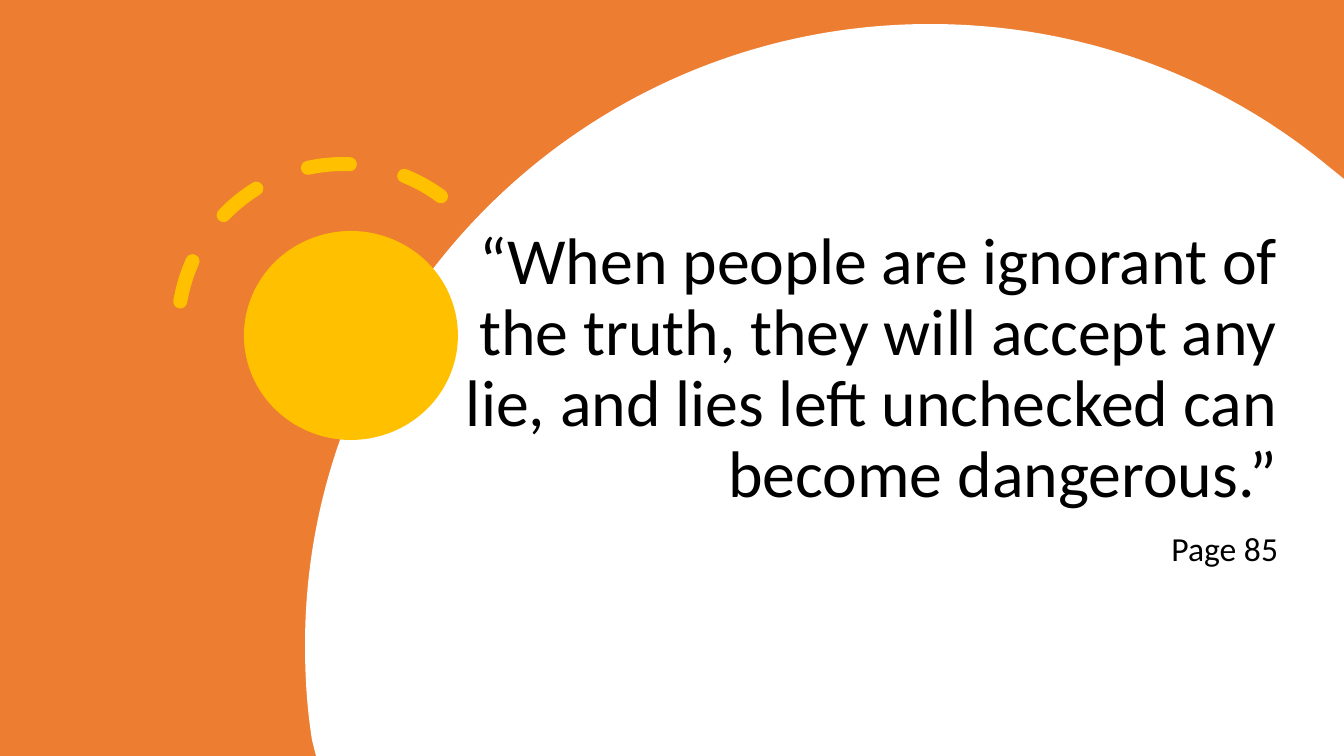
"""Build a quotation slide with a sun rising over a large white disc."""
from dataclasses import dataclass

import pptx
import pptx.dml.color
import pptx.enum.dml
import pptx.enum.shapes
import pptx.enum.text
import pptx.oxml.ns
import pptx.shapes.autoshape
import pptx.slide
import pptx.util

EMU_PER_PX = 12192000 / 1344
SLIDE_WIDTH, SLIDE_HEIGHT = 1344, 756
SHAPES = pptx.enum.shapes.MSO_SHAPE
ANCHORS = pptx.enum.text.MSO_ANCHOR
Point = tuple[int, int]


@dataclass(frozen=True)
class Theme:
    """Colours, font and type sizes of the slide."""
    orange: str = "ED7D31"
    white: str = "FFFFFF"
    gold: str = "FFC000"
    text: str = "000000"
    font: str = "Calibri"
    quote_size: int = 47
    source_size: int = 24
    ray_width: int = 10


@dataclass(frozen=True)
class Box:
    """A rectangle in px."""
    left: int
    top: int
    width: int
    height: int

    def emu(self) -> tuple[int, int, int, int]:
        """Return the four lengths in EMU."""
        return px(self.left), px(self.top), px(self.width), px(self.height)


@dataclass(frozen=True)
class Panel:
    """A filled preset shape."""
    kind: pptx.enum.shapes.MSO_SHAPE
    box: Box
    color: str


@dataclass(frozen=True)
class Outline:
    """A closed outline; a segment has one point if straight, three if curved."""
    start: Point
    segments: tuple[tuple[Point, ...], ...]
    color: str


@dataclass(frozen=True)
class Caption:
    """A right-aligned text block."""
    text: str
    box: Box
    size: int
    anchor: pptx.enum.text.MSO_ANCHOR
    space_before: int


THEME = Theme()
BACKDROP = Panel(SHAPES.RECTANGLE, Box(0, 0, SLIDE_WIDTH, SLIDE_HEIGHT), THEME.orange)
SUN = Panel(SHAPES.OVAL, Box(244, 231, 214, 209), THEME.gold)
HORIZON = Outline((930, 24), (
    ((1082, 24), (1220, 77), (1328, 166)),
    ((SLIDE_WIDTH, 179),),
    ((SLIDE_WIDTH, SLIDE_HEIGHT),),
    ((316, SLIDE_HEIGHT),),
    ((312, 740),),
    ((307, 709), (305, 677), (305, 645)),
    ((305, 302), (586, 24), (930, 24)),
), THEME.white)
RAYS = Box(178, 164, 330, 330)
CAPTIONS = (
    Caption("“When people are ignorant of the truth, they will accept any lie, "
            "and lies left unchecked can become dangerous.”",
            Box(445, 214, 843, 303), THEME.quote_size, ANCHORS.BOTTOM, 0),
    Caption("Page 85", Box(445, 527, 843, 146), THEME.source_size, ANCHORS.TOP, 10),
)


def px(length: int) -> int:
    """Turn px into EMU."""
    return round(length * EMU_PER_PX)


def rgb(color: str) -> pptx.dml.color.RGBColor:
    """Turn a hex string into a colour."""
    return pptx.dml.color.RGBColor.from_string(color)


def paint(shape: pptx.shapes.autoshape.Shape, color: str) -> None:
    """Give a shape a flat fill without line or shadow."""
    shape.shadow.inherit = False
    shape.fill.solid()
    shape.fill.fore_color.rgb = rgb(color)
    shape.line.fill.background()


def draw_panel(slide: pptx.slide.Slide, panel: Panel) -> None:
    """Draw a filled preset shape."""
    paint(slide.shapes.add_shape(panel.kind, *panel.box.emu()), panel.color)


def draw_outline(slide: pptx.slide.Slide, outline: Outline) -> None:
    """Draw a closed outline, joining each three-point segment into a curve."""
    qn = pptx.oxml.ns.qn
    points = [(px(x), px(y)) for segment in outline.segments for x, y in segment]
    builder = slide.shapes.build_freeform(*map(px, outline.start))
    builder.add_line_segments(points, close=True)
    shape = builder.convert_to_shape()
    lines = iter(list(shape.element.iter(qn("a:lnTo"))))
    for segment in outline.segments:
        curve = next(lines)
        if len(segment) == 3:
            curve.tag = qn("a:cubicBezTo")
            for line in (next(lines), next(lines)):
                curve.append(line[0])
                line.getparent().remove(line)
    paint(shape, outline.color)


def draw_rays(slide: pptx.slide.Slide, box: Box, color: str) -> None:
    """Draw the round-capped dashed arc around the sun."""
    arc = slide.shapes.add_shape(SHAPES.ARC, *box.emu())
    arc.shadow.inherit = False
    arc.adjustments[0] = 144.56
    arc.adjustments[1] = 2.28
    arc.rotation = 308.7
    arc.fill.background()
    arc.line.color.rgb = rgb(color)
    arc.line.width = pptx.util.Pt(THEME.ray_width)
    arc.line.dash_style = pptx.enum.dml.MSO_LINE.DASH
    arc.element.spPr.find(pptx.oxml.ns.qn("a:ln")).set("cap", "rnd")


def draw_caption(slide: pptx.slide.Slide, caption: Caption) -> None:
    """Draw a right-aligned text block."""
    frame = slide.shapes.add_textbox(*caption.box.emu()).text_frame
    frame.word_wrap = True
    frame.vertical_anchor = caption.anchor
    paragraph = frame.paragraphs[0]
    paragraph.alignment = pptx.enum.text.PP_ALIGN.RIGHT
    paragraph.line_spacing = 0.9
    paragraph.space_before = pptx.util.Pt(caption.space_before)
    run = paragraph.add_run()
    run.text = caption.text
    run.font.name = THEME.font
    run.font.size = pptx.util.Pt(caption.size)
    run.font.color.rgb = rgb(THEME.text)


def main() -> None:
    """Build and save the presentation."""
    presentation = pptx.Presentation()
    presentation.slide_width = px(SLIDE_WIDTH)
    presentation.slide_height = px(SLIDE_HEIGHT)
    slide = presentation.slides.add_slide(presentation.slide_layouts[6])
    draw_panel(slide, BACKDROP)
    draw_outline(slide, HORIZON)
    draw_panel(slide, SUN)
    draw_rays(slide, RAYS, THEME.gold)
    for caption in CAPTIONS:
        draw_caption(slide, caption)
    presentation.save("out.pptx")


if __name__ == "__main__":
    main()
